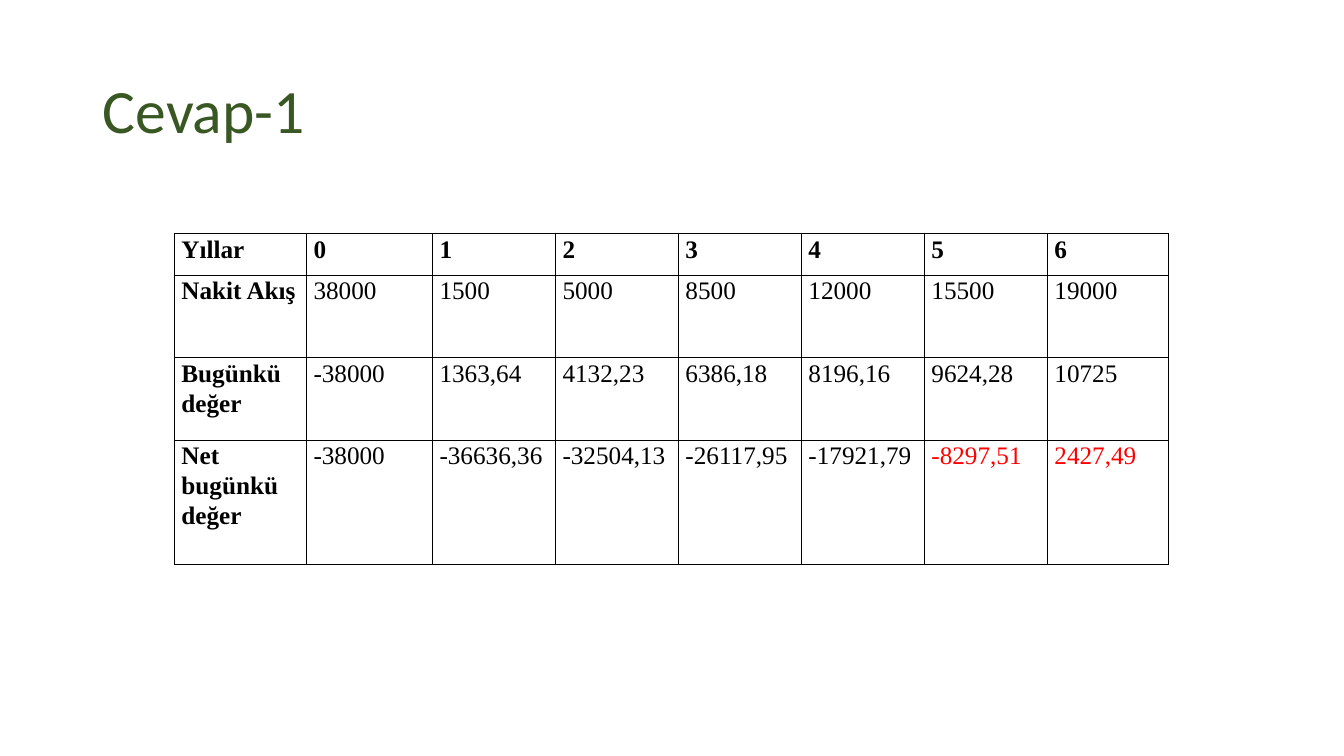
import lxml.etree
import pptx
import pptx.dml.color
import pptx.enum.text
import pptx.oxml.ns
import pptx.util
from pptx.util import Inches

BLACK = pptx.dml.color.RGBColor(0x00, 0x00, 0x00)
GREEN = pptx.dml.color.RGBColor(0x38, 0x57, 0x23)
RED = pptx.dml.color.RGBColor(0xFF, 0x00, 0x00)

COLUMN_WIDTHS = [1.31, 1.25, 1.22, 1.22, 1.22, 1.22, 1.22, 1.2]
ROW_HEIGHTS = [0.41, 0.82, 0.82, 1.23]
CASH_FLOW_ROWS = [
    ["Yıllar", "0", "1", "2", "3", "4", "5", "6"],
    ["Nakit Akış", "38000", "1500", "5000", "8500", "12000", "15500", "19000"],
    ["Bugünkü değer", "-38000", "1363,64", "4132,23", "6386,18", "8196,16",
     "9624,28", "10725"],
    ["Net bugünkü değer", "-38000", "-36636,36", "-32504,13", "-26117,95",
     "-17921,79", "-8297,51", "2427,49"],
]
PAYBACK_CELLS = {(3, 6), (3, 7)}


def write_text(text_frame, text, *, font, size, color, alignment, spacing,
               bold=False):
    paragraph = text_frame.paragraphs[0]
    paragraph.alignment = alignment
    paragraph.line_spacing = spacing
    run = paragraph.add_run()
    run.text = text
    run.font.name = font
    run.font.size = pptx.util.Pt(size)
    run.font.bold = bold
    run.font.color.rgb = color


def add_title(slide, text):
    title = slide.shapes.title
    title.left, title.top = Inches(0.92), Inches(0.4)
    title.width, title.height = Inches(11.5), Inches(1.45)
    title.text_frame.auto_size = pptx.enum.text.MSO_AUTO_SIZE.NONE
    title.text_frame.vertical_anchor = pptx.enum.text.MSO_ANCHOR.MIDDLE
    write_text(title.text_frame, text, font="Calibri", size=44, color=GREEN,
               alignment=pptx.enum.text.PP_ALIGN.LEFT, spacing=0.9)


def set_borders(cell, color, points):
    qualified = pptx.oxml.ns.qn
    properties = cell._tc.get_or_add_tcPr()
    for side in ("lnL", "lnR", "lnT", "lnB"):
        line = lxml.etree.SubElement(properties, qualified(f"a:{side}"),
                                     w=str(pptx.util.Pt(points)))
        fill = lxml.etree.SubElement(line, qualified("a:solidFill"))
        lxml.etree.SubElement(fill, qualified("a:srgbClr"), val=str(color))


def format_cell(cell):
    cell.margin_left = cell.margin_right = Inches(0.07)
    cell.margin_top = cell.margin_bottom = 0
    set_borders(cell, BLACK, 1)
    cell.fill.background()


def add_cash_flow_table(slide):
    table = slide.shapes.add_table(
        len(ROW_HEIGHTS), len(COLUMN_WIDTHS), Inches(1.73), Inches(2.32),
        Inches(sum(COLUMN_WIDTHS)), Inches(sum(ROW_HEIGHTS))).table
    table.horz_banding = False
    for column, width in zip(table.columns, COLUMN_WIDTHS):
        column.width = Inches(width)
    for row, height in zip(table.rows, ROW_HEIGHTS):
        row.height = Inches(height)
    for row_index, values in enumerate(CASH_FLOW_ROWS):
        for column_index, value in enumerate(values):
            cell = table.cell(row_index, column_index)
            format_cell(cell)
            is_payback = (row_index, column_index) in PAYBACK_CELLS
            write_text(cell.text_frame, value, font="Times New Roman", size=18,
                       color=RED if is_payback else BLACK,
                       alignment=pptx.enum.text.PP_ALIGN.JUSTIFY, spacing=1.07,
                       bold=row_index == 0 or column_index == 0)


def main():
    presentation = pptx.Presentation()
    presentation.slide_width = Inches(13.33)
    presentation.slide_height = Inches(7.5)
    slide = presentation.slides.add_slide(presentation.slide_layouts[5])
    add_title(slide, "Cevap-1")
    add_cash_flow_table(slide)
    presentation.save("out.pptx")


if __name__ == "__main__":
    main()
